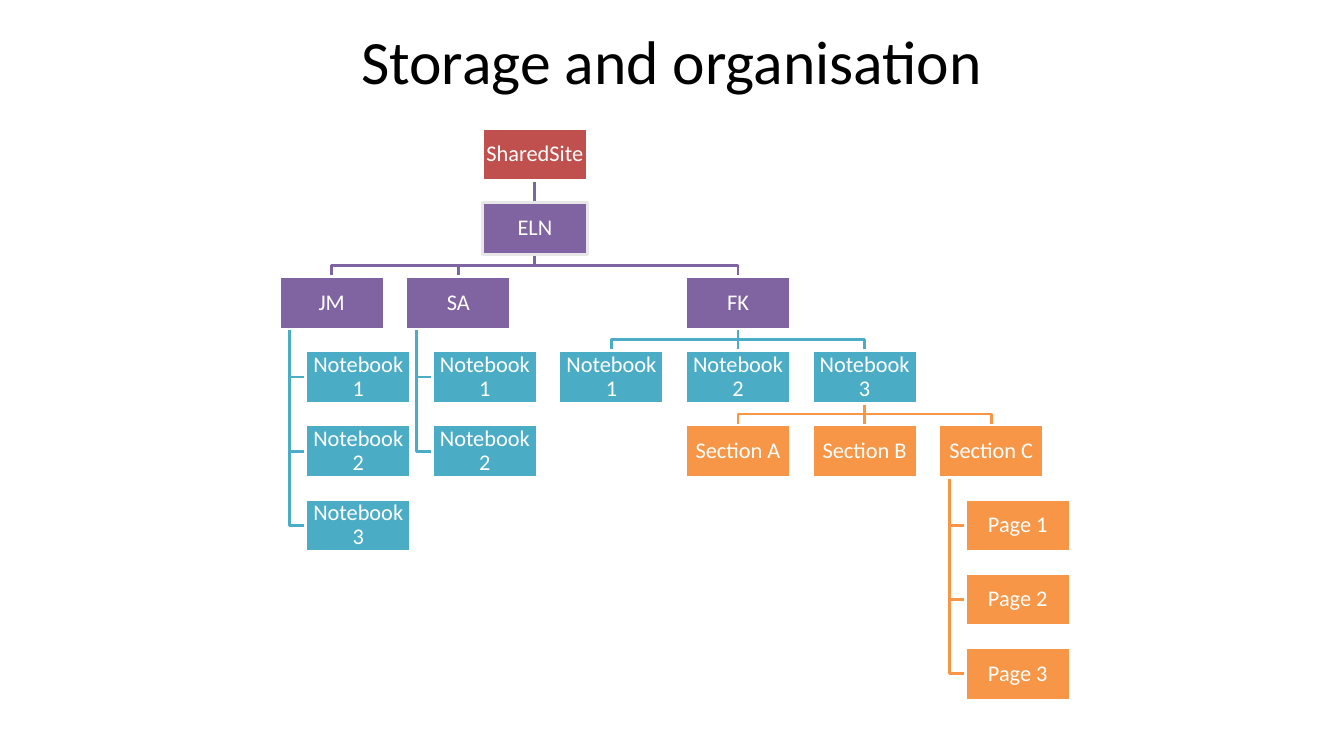
from dataclasses import dataclass, field

from lxml.etree import SubElement
from pptx import Presentation
from pptx.dml.color import RGBColor
from pptx.dml.line import LineFormat
from pptx.enum.shapes import MSO_CONNECTOR as Connector, MSO_SHAPE as Preset
from pptx.enum.text import MSO_ANCHOR as Anchor, PP_ALIGN as Align
from pptx.oxml.ns import qn
from pptx.slide import Slide
from pptx.text.text import TextFrame
from pptx.util import Cm, Pt

COLOURS = {
    "black": "000000",
    "white": "FFFFFF",
    "grey": "E7E7E7",
    "red": "C0504D",
    "purple": "8064A2",
    "teal": "4BACC6",
    "orange": "F79646",
}
FONT = "Calibri"
CHART_LEFT, CHART_TOP = 7.04, 3.23
BOX_WIDTH, BOX_HEIGHT = 2.64, 1.32
COLUMN_PITCH, ROW_PITCH = 3.19, 1.87
INDENT = 0.21
TRUNK = BOX_WIDTH / 10


@dataclass
class Node:
    """One box of the chart; a column counts in column pitches."""

    label: str
    colour: str
    children: list["Node"] = field(default_factory=list)
    column: float | None = None
    hanging: bool = False
    outline: str = "white"
    row: int = 0

    @property
    def left(self) -> float:
        return CHART_LEFT + self.column * COLUMN_PITCH

    @property
    def centre(self) -> float:
        return self.left + BOX_WIDTH / 2

    @property
    def top(self) -> float:
        return CHART_TOP + self.row * ROW_PITCH

    @property
    def bottom(self) -> float:
        return self.top + BOX_HEIGHT


def numbered(label: str, colour: str, count: int) -> list[Node]:
    """Return boxes numbered from one."""
    return [Node(f"{label} {number}", colour) for number in range(1, count + 1)]


def build_tree() -> Node:
    """Return the storage hierarchy."""
    sections = [
        Node("Section A", "orange", column=3 + INDENT),
        Node("Section B", "orange", column=4 + INDENT),
        Node("Section C", "orange", numbered("Page", "orange", 3), 5 + INDENT, True),
    ]
    notebooks = numbered("Notebook", "teal", 3)
    notebooks[0].column = 2 + INDENT
    notebooks[1].column = 3 + INDENT
    notebooks[2].children = sections
    people = [
        Node("JM", "purple", numbered("Notebook", "teal", 3), 0, True),
        Node("SA", "purple", numbered("Notebook", "teal", 2), 1, True),
        Node("FK", "purple", notebooks),
    ]
    return Node("SharedSite", "red", [Node("ELN", "purple", people, outline="grey")])


def arrange(node: Node, row: int = 0) -> None:
    """Set rows downwards and centre each parent over its children."""
    node.row = row
    for index, child in enumerate(node.children):
        if node.hanging:
            child.column = node.column + INDENT
        arrange(child, row + 1 + (index if node.hanging else 0))
    if node.column is None:
        node.column = (node.children[0].column + node.children[-1].column) / 2


def rgb(colour: str) -> RGBColor:
    """Look up a named colour."""
    return RGBColor.from_string(COLOURS[colour])


def style_line(line: LineFormat, colour: str) -> None:
    """Apply the common line width and a colour."""
    line.color.rgb = rgb(colour)
    line.width = Pt(2)


def write(frame: TextFrame, text: str, size: int, colour: str) -> None:
    """Write one centred paragraph."""
    frame.word_wrap = True
    frame.vertical_anchor = Anchor.MIDDLE
    paragraph = frame.paragraphs[0]
    paragraph.text = text
    paragraph.alignment = Align.CENTER
    paragraph.font.name = FONT
    paragraph.font.size = Pt(size)
    paragraph.font.color.rgb = rgb(colour)


def draw_link(slide: Slide, parent: Node, child: Node) -> None:
    """Join a parent to a child with a straight or bent line."""
    if not parent.hanging and abs(parent.centre - child.centre) < 0.01:
        connector = slide.shapes.add_connector(
            Connector.STRAIGHT, Cm(parent.centre), Cm(parent.bottom), Cm(child.centre), Cm(child.top)
        )
        style_line(connector.line, child.colour)
        SubElement(connector._element.spPr, qn("a:effectLst"))
        return
    if parent.hanging:
        trunk, middle = parent.left + TRUNK, child.top + BOX_HEIGHT / 2
        points = [(trunk, parent.bottom), (trunk, middle), (child.left, middle)]
    else:
        bend = (parent.bottom + child.top) / 2
        points = [
            (parent.centre, parent.bottom),
            (parent.centre, bend),
            (child.centre, bend),
            (child.centre, child.top),
        ]
    start, *corners = [(Cm(x), Cm(y)) for x, y in points]
    builder = slide.shapes.build_freeform(*start)
    builder.add_line_segments(corners, close=False)
    shape = builder.convert_to_shape()
    shape.shadow.inherit = False
    shape.fill.background()
    style_line(shape.line, child.colour)


def draw_links(slide: Slide, node: Node) -> None:
    """Draw every link below a node."""
    for child in node.children:
        draw_link(slide, node, child)
        draw_links(slide, child)


def draw_boxes(slide: Slide, node: Node) -> None:
    """Draw a node and every box below it."""
    shape = slide.shapes.add_shape(
        Preset.RECTANGLE, Cm(node.left), Cm(node.top), Cm(BOX_WIDTH), Cm(BOX_HEIGHT)
    )
    shape.shadow.inherit = False
    shape.fill.solid()
    shape.fill.fore_color.rgb = rgb(node.colour)
    style_line(shape.line, node.outline)
    frame = shape.text_frame
    frame.margin_left = frame.margin_right = frame.margin_top = frame.margin_bottom = Cm(0.03)
    write(frame, node.label, 16, "white")
    frame.paragraphs[0].line_spacing = 0.9
    for child in node.children:
        draw_boxes(slide, child)


def main() -> None:
    """Build and save the slide."""
    presentation = Presentation()
    presentation.slide_width, presentation.slide_height = Cm(33.87), Cm(19.05)
    slide = presentation.slides.add_slide(presentation.slide_layouts[5])
    title = slide.shapes.title
    title.left, title.top, title.width, title.height = Cm(5.5), Cm(-0.08), Cm(22.86), Cm(3.18)
    write(title.text_frame, "Storage and organisation", 44, "black")
    tree = build_tree()
    arrange(tree)
    draw_links(slide, tree)
    draw_boxes(slide, tree)
    presentation.save("out.pptx")


if __name__ == "__main__":
    main()
